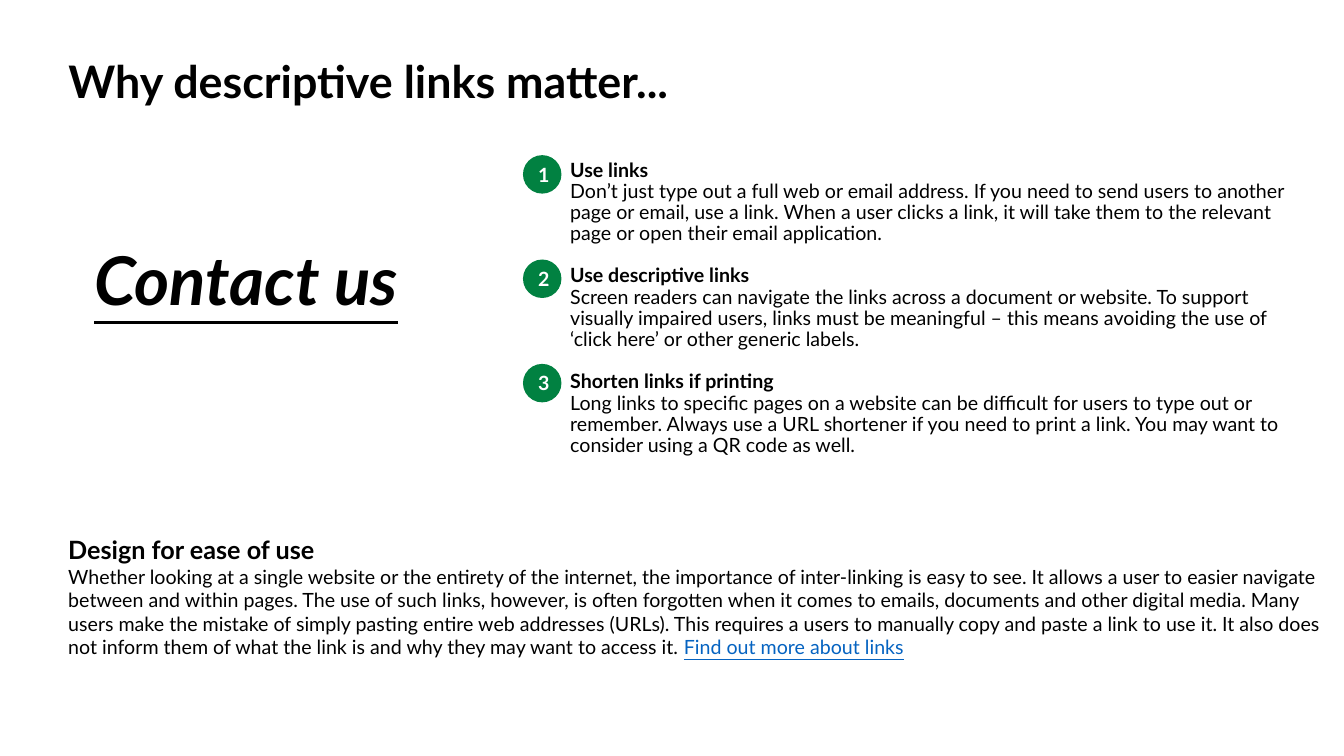
from pptx import Presentation
from pptx.dml.color import RGBColor
from pptx.enum.shapes import MSO_SHAPE
from pptx.enum.text import MSO_ANCHOR, MSO_AUTO_SIZE, PP_ALIGN
from pptx.util import Cm, Pt

OVAL = MSO_SHAPE.OVAL
MIDDLE = MSO_ANCHOR.MIDDLE
NO_FIT = MSO_AUTO_SIZE.NONE
LEFT, CENTER = PP_ALIGN.LEFT, PP_ALIGN.CENTER

FONT = "Lato"
BLACK = RGBColor(0x00, 0x00, 0x00)
WHITE = RGBColor(0xFF, 0xFF, 0xFF)
GREEN = RGBColor(0x01, 0x81, 0x41)
LINK_BLUE = RGBColor(0x05, 0x63, 0xC1)

TIPS = [
    ("Use links",
     "Don’t just type out a full web or email address. If you need to send users "
     "to another page or email, use a link. When a user clicks a link, it will take "
     "them to the relevant page or open their email application."),
    ("Use descriptive links",
     "Screen readers can navigate the links across a document or website. To support "
     "visually impaired users, links must be meaningful – this means avoiding the use "
     "of ‘click here’ or other generic labels."),
    ("Shorten links if printing",
     "Long links to specific pages on a website can be difficult for users to type out "
     "or remember. Always use a URL shortener if you need to print a link. You may want "
     "to consider using a QR code as well."),
]
EASE_OF_USE = (
    "Whether looking at a single website or the entirety of the internet, the importance "
    "of inter-linking is easy to see. It allows a user to easier navigate between and "
    "within pages. The use of such links, however, is often forgotten when it comes to "
    "emails, documents and other digital media. Many users make the mistake of simply "
    "pasting entire web addresses (URLs). This requires a users to manually copy and paste "
    "a link to use it. It also does not inform them of what the link is and why they may "
    "want to access it. ")


def add_run(p, text, size=14, color=BLACK, bold=False, italic=False, underline=False):
    r = p.add_run()
    r.text = text
    r.font.name = FONT
    r.font.size = Pt(size)
    r.font.color.rgb = color
    r.font.bold = bold
    r.font.italic = italic
    r.font.underline = underline


def next_paragraph(tf, align=LEFT, spacing=1.0, before=0):
    p = tf.add_paragraph() if tf.paragraphs[0].runs else tf.paragraphs[0]
    p.alignment = align
    p.line_spacing = spacing
    p.space_before = Pt(before)
    return p


def add_box(s, left, top, width, height):
    tf = s.shapes.add_textbox(Cm(left), Cm(top), Cm(width), Cm(height)).text_frame
    tf.word_wrap = True
    return tf


def set_title(s, text):
    title = s.shapes.title
    title.left, title.top = Cm(1.47), Cm(1.02)
    title.width, title.height = Cm(19.15), Cm(2.21)
    tf = title.text_frame
    tf.auto_size = NO_FIT
    tf.vertical_anchor = MIDDLE
    add_run(next_paragraph(tf, spacing=0.9), text, size=32, bold=True)


def add_badge(s, number, left, top):
    size = Cm(0.97)
    badge = s.shapes.add_shape(OVAL, Cm(left), Cm(top), size, size)
    badge.shadow.inherit = False
    badge.fill.solid()
    badge.fill.fore_color.rgb = GREEN
    badge.line.fill.background()
    tf = badge.text_frame
    tf.margin_left = Cm(0.08)
    tf.margin_right = tf.margin_top = tf.margin_bottom = 0
    tf.vertical_anchor = MIDDLE
    add_run(next_paragraph(tf, CENTER), str(number), color=WHITE, bold=True)


def add_tips(s):
    tf = add_box(s, 14.12, 3.91, 19.15, 8.03)
    for i, (heading, advice) in enumerate(TIPS):
        before = 15.1 if i else 0
        add_run(next_paragraph(tf, spacing=0.9, before=before), heading, bold=True)
        add_run(next_paragraph(tf, spacing=0.9), advice)
        add_badge(s, i + 1, 13.18, 3.91 + 2.63 * i)


def add_ease_of_use(s):
    tf = add_box(s, 1.47, 13.34, 32.14, 3.43)
    add_run(next_paragraph(tf), "Design for ease of use", size=18, bold=True)
    p = next_paragraph(tf)
    add_run(p, EASE_OF_USE)
    add_run(p, "Find out more about links", color=LINK_BLUE, underline=True)


def main():
    prs = Presentation()
    prs.slide_width, prs.slide_height = Cm(33.87), Cm(19.05)
    s = prs.slides.add_slide(prs.slide_layouts.get_by_name("Title Only"))
    set_title(s, "Why descriptive links matter...")
    add_tips(s)
    add_ease_of_use(s)
    contact = add_box(s, 2.13, 5.87, 9.42, 2.31)
    add_run(next_paragraph(contact), "Contact us", size=48, bold=True, italic=True,
            underline=True)
    prs.save("out.pptx")


if __name__ == "__main__":
    main()
